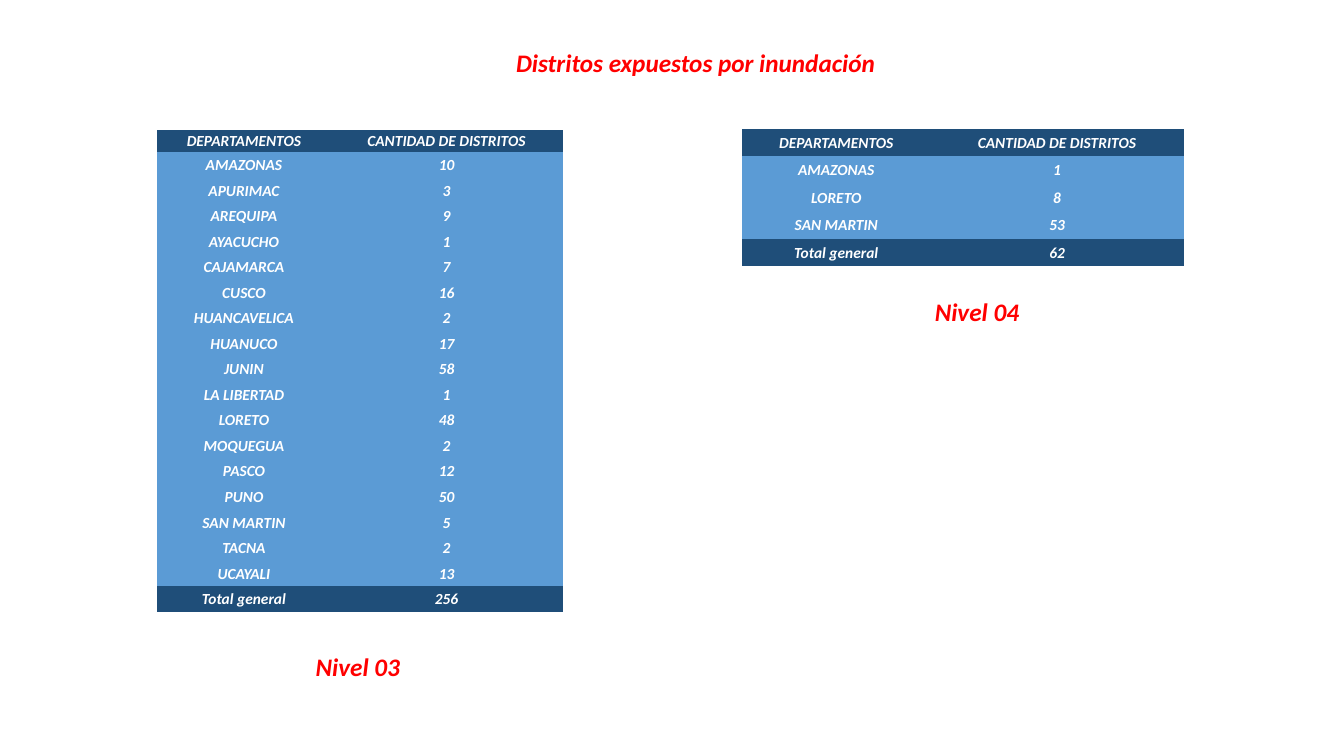
from dataclasses import dataclass

from pptx import Presentation
from pptx.dml.color import RGBColor as RGB
from pptx.enum.text import MSO_ANCHOR as ANCHOR, MSO_AUTO_SIZE as AUTO, PP_ALIGN as ALIGN
from pptx.util import Inches, Pt


@dataclass(frozen=True)
class Theme:
    font: str = "Calibri"
    heading: RGB = RGB(0xFF, 0x00, 0x00)
    cell_text: RGB = RGB(0xFF, 0xFF, 0xFF)
    band: RGB = RGB(0x1F, 0x4E, 0x79)
    body: RGB = RGB(0x5B, 0x9B, 0xD5)
    heading_size: Pt = Pt(18)
    cell_size: Pt = Pt(11)


THEME = Theme()
PLAIN_TABLE_STYLE = "{2D5ABB26-0587-4C30-8999-92F81FD0307C}"

HEADER = ("DEPARTAMENTOS", "CANTIDAD DE DISTRITOS")
LEVEL_3 = {
    "AMAZONAS": 10, "APURIMAC": 3, "AREQUIPA": 9, "AYACUCHO": 1,
    "CAJAMARCA": 7, "CUSCO": 16, "HUANCAVELICA": 2, "HUANUCO": 17,
    "JUNIN": 58, "LA LIBERTAD": 1, "LORETO": 48, "MOQUEGUA": 2,
    "PASCO": 12, "PUNO": 50, "SAN MARTIN": 5, "TACNA": 2, "UCAYALI": 13,
}
LEVEL_4 = {"AMAZONAS": 1, "LORETO": 8, "SAN MARTIN": 53}


def set_attrs(obj, values):
    for name, value in values.items():
        setattr(obj, name, value)


def write(tf, text, size, color):
    p = tf.paragraphs[0]
    set_attrs(p, {"alignment": ALIGN.CENTER, "line_spacing": 1.0})
    r = p.add_run()
    r.text = text
    set_attrs(r.font, {"name": THEME.font, "size": size, "bold": True, "italic": True})
    r.font.color.rgb = color


def format_heading(sp, text, wrap):
    set_attrs(sp.text_frame, {"word_wrap": wrap, "auto_size": AUTO.NONE,
                              "vertical_anchor": ANCHOR.TOP})
    write(sp.text_frame, text, THEME.heading_size, THEME.heading)


def add_title(s, text, left, top, width, height):
    sp = s.shapes.title
    set_attrs(sp, {"left": Inches(left), "top": Inches(top),
                   "width": Inches(width), "height": Inches(height)})
    format_heading(sp, text, wrap=False)


def add_caption(s, text, left, top):
    sp = s.shapes.add_textbox(Inches(left), Inches(top), Inches(1.2), Inches(0.4))
    format_heading(sp, text, wrap=True)


def fill_cell(cell, text, color):
    set_attrs(cell, {"margin_left": Inches(0.01), "margin_right": Inches(0.01),
                     "margin_top": Inches(0.01), "margin_bottom": 0,
                     "vertical_anchor": ANCHOR.MIDDLE})
    cell.fill.solid()
    cell.fill.fore_color.rgb = color
    write(cell.text_frame, text, THEME.cell_size, THEME.cell_text)


def add_district_table(s, districts, left, top, col_widths, height, header_height):
    rows = [HEADER, *districts.items(), ("Total general", sum(districts.values()))]
    last = len(rows) - 1
    table = s.shapes.add_table(len(rows), len(HEADER), Inches(left), Inches(top),
                               Inches(sum(col_widths)), Inches(height)).table

    # Plain style: no banding and no grid lines
    set_attrs(table, {"first_row": False, "horz_banding": False})
    table._tbl.tblPr[0].text = PLAIN_TABLE_STYLE

    for column, width in zip(table.columns, col_widths):
        column.width = Inches(width)
    for i, values in enumerate(rows):
        row_height = (height - header_height) / last if i else header_height
        table.rows[i].height = Inches(row_height)
        color = THEME.band if i in (0, last) else THEME.body
        for cell, value in zip(table.rows[i].cells, values):
            fill_cell(cell, str(value), color)


def main():
    prs = Presentation()
    set_attrs(prs, {"slide_width": Inches(13.33), "slide_height": Inches(7.5)})
    s = prs.slides.add_slide(prs.slide_layouts[5])

    # Headings
    add_title(s, "Distritos expuestos por inundación", 5, 0.42, 3.8, 0.4)
    add_caption(s, "Nivel 03", 2.95, 6.41)
    add_caption(s, "Nivel 04", 9.09, 2.89)

    # Districts by department
    add_district_table(s, LEVEL_3, 1.56, 1.29, (1.72, 2.3), 4.78, 0.22)
    add_district_table(s, LEVEL_4, 7.36, 1.28, (1.87, 2.51), 1.36, 0.27)

    prs.save("out.pptx")


if __name__ == "__main__":
    main()
